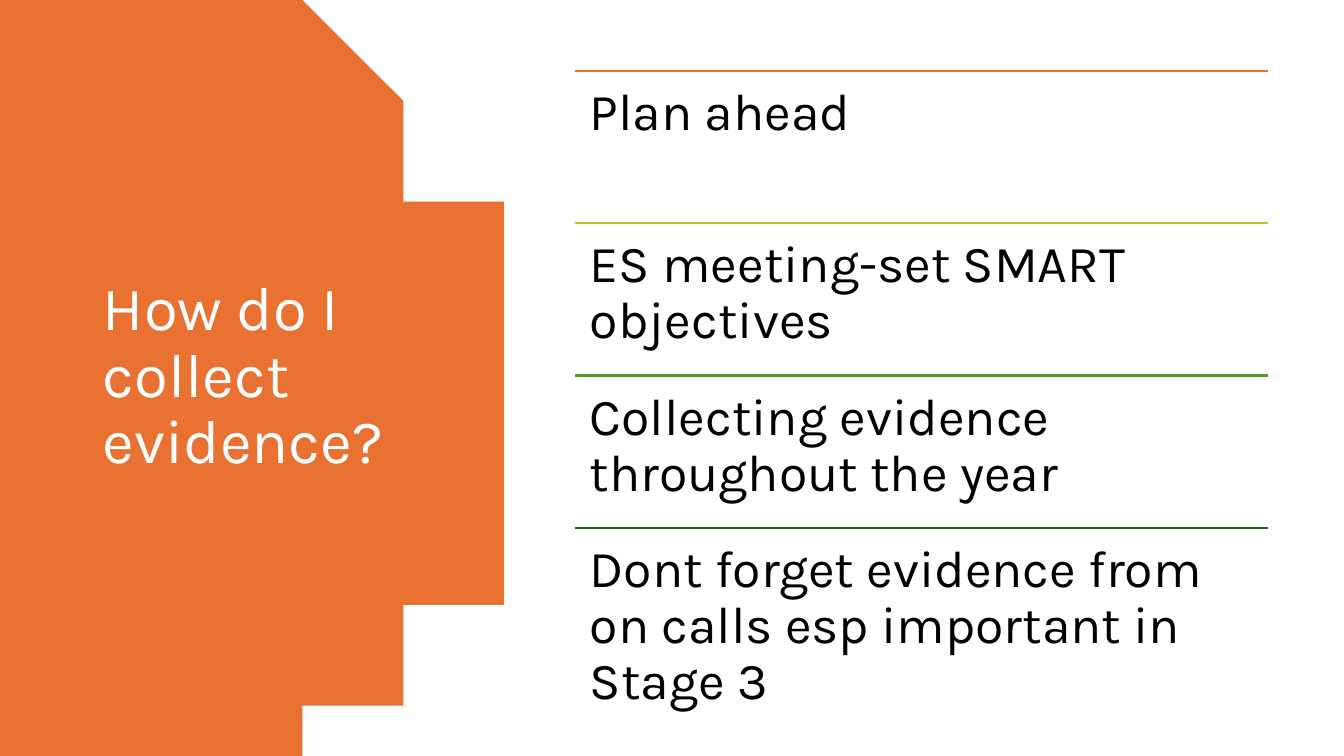
from dataclasses import dataclass
from math import asin, cos, sin

from lxml.etree import SubElement
from pptx import Presentation
from pptx.dml.color import RGBColor
from pptx.enum.shapes import MSO_CONNECTOR as Connector
from pptx.enum.text import MSO_ANCHOR as Anchor, MSO_AUTO_SIZE as AutoSize, PP_ALIGN as Align
from pptx.oxml.ns import qn
from pptx.slide import Slide
from pptx.text.text import TextFrame
from pptx.util import Inches, Pt

ORANGE = RGBColor(0xE9, 0x71, 0x32)
LIME = RGBColor(0xCB, 0xC1, 0x1E)
GREEN = RGBColor(0x56, 0x99, 0x1D)
FOREST = RGBColor(0x19, 0x6B, 0x24)
WHITE = RGBColor(0xFF, 0xFF, 0xFF)
BLACK = RGBColor(0x00, 0x00, 0x00)

FONT = "Karla"
PAGE_WIDTH, PAGE_HEIGHT = 13.33, 7.5
LIST_LEFT, LIST_TOP, LIST_WIDTH, LIST_HEIGHT = 5.7, 0.7, 6.88, 6.05
INSET = 0.15
DISC_EDGE, DISC_RIGHT = 2.83, 4.93
ARC_STEPS = 120


@dataclass(frozen=True)
class Step:
    text: str
    color: RGBColor


STEPS = [
    Step("Plan ahead", ORANGE),
    Step("ES meeting-set SMART objectives", LIME),
    Step("Collecting evidence throughout the year", GREEN),
    Step("Dont forget evidence from on calls esp important in Stage 3", FOREST),
]


def write_text(frame: TextFrame, text: str, size: float, color: RGBColor) -> None:
    frame.text = text
    frame.word_wrap = True
    frame.auto_size = AutoSize.NONE
    para = frame.paragraphs[0]
    para.alignment = Align.LEFT
    para.line_spacing = 0.9
    for span in para.runs:
        span.font.name = FONT
        span.font.size = Pt(size)
        span.font.color.rgb = color


def add_title(page: Slide, text: str) -> None:
    title = page.shapes.title
    title.left, title.top = Inches(0.92), Inches(0.7)
    title.width, title.height = Inches(3.23), Inches(6.09)
    write_text(title.text_frame, text, 44, WHITE)
    title.text_frame.vertical_anchor = Anchor.MIDDLE


def add_disc(page: Slide) -> None:
    middle = PAGE_HEIGHT / 2
    bulge = DISC_RIGHT - DISC_EDGE
    radius = (bulge**2 + middle**2) / (2 * bulge)
    center = DISC_RIGHT - radius
    sweep = asin(middle / radius)
    angles = [sweep * (2 * step / ARC_STEPS - 1) for step in range(ARC_STEPS + 1)]
    arc = [(center + radius * cos(angle), middle + radius * sin(angle)) for angle in angles]
    outline = page.shapes.build_freeform(0, 0, scale=Inches(1))
    outline.add_line_segments([*arc, (0, PAGE_HEIGHT)], close=True)
    disc = outline.convert_to_shape()
    disc.shadow.inherit = False
    disc.fill.solid()
    disc.fill.fore_color.rgb = ORANGE
    disc.line.fill.background()
    page.shapes.title.element.addprevious(disc.element)


def add_step(page: Slide, step: Step, top: float, height: float) -> None:
    left, right = Inches(LIST_LEFT), Inches(LIST_LEFT + LIST_WIDTH)
    rule = page.shapes.add_connector(Connector.STRAIGHT, left, Inches(top), right, Inches(top))
    rule.line.color.rgb = step.color
    rule.line.width = Pt(1.5)
    SubElement(rule.element.spPr, qn("a:effectLst"))

    box = page.shapes.add_textbox(left, Inches(top), Inches(LIST_WIDTH), Inches(height))
    frame = box.text_frame
    frame.margin_left = frame.margin_right = Inches(INSET)
    frame.margin_top = frame.margin_bottom = Inches(INSET)
    write_text(frame, step.text, 37, BLACK)


def main() -> None:
    deck = Presentation()
    deck.slide_width, deck.slide_height = Inches(PAGE_WIDTH), Inches(PAGE_HEIGHT)
    page = deck.slides.add_slide(deck.slide_layouts.get_by_name("Title Only"))
    add_disc(page)
    add_title(page, "How do I collect evidence?")
    row_height = LIST_HEIGHT / len(STEPS)
    for row, step in enumerate(STEPS):
        add_step(page, step, LIST_TOP + row * row_height, row_height)
    deck.save("out.pptx")


if __name__ == "__main__":
    main()
